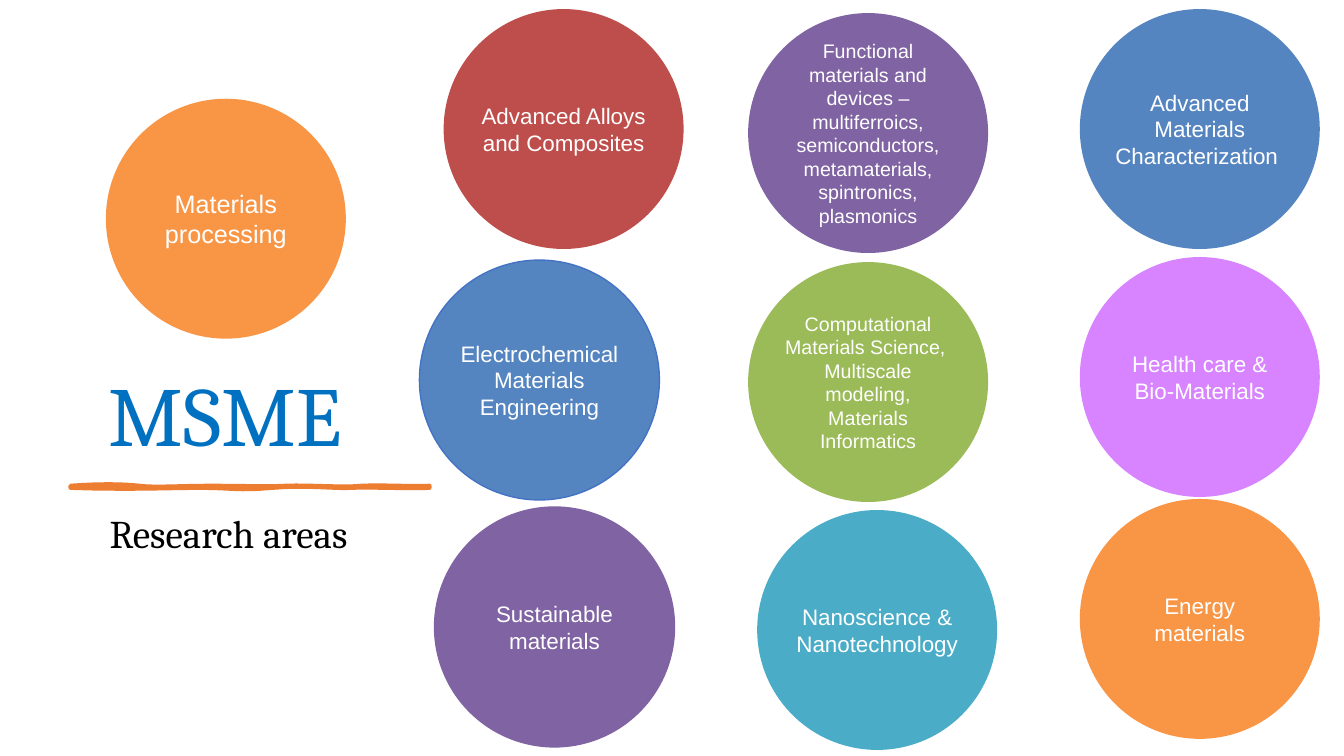
import pptx
import pptx.dml.color
import pptx.enum.shapes
import pptx.enum.text
import pptx.util

Inches = pptx.util.Inches
Pt = pptx.util.Pt
RGBColor = pptx.dml.color.RGBColor
Anchor = pptx.enum.text.MSO_ANCHOR
Align = pptx.enum.text.PP_ALIGN

WHITE = RGBColor(0xFF, 0xFF, 0xFF)
BLACK = RGBColor(0, 0, 0)
TITLE_BLUE = RGBColor(0x00, 0x70, 0xC0)
RULE_ORANGE = RGBColor(0xED, 0x7D, 0x31)
GREEN = RGBColor(0x9B, 0xBB, 0x58)
PURPLE = RGBColor(0x80, 0x63, 0xA2)
ORANGE = RGBColor(0xF8, 0x96, 0x46)
BLUE = RGBColor(0x55, 0x85, 0xC0)
EDGE_BLUE = RGBColor(0x44, 0x72, 0xC4)
TEAL = RGBColor(0x4B, 0xAC, 0xC7)
VIOLET = RGBColor(0xD8, 0x83, 0xFF)
RED = RGBColor(0xBE, 0x4E, 0x4C)

# Content: paragraphs, left, top, text size, fill, outline
DIAMETER = 2.38
RIGHT_COLUMN = 10.71
MIDDLE_COLUMN = 7.42
RESEARCH_AREAS = [
    (["Computational Materials Science, ", "Multiscale modeling,", "Materials Informatics"],
     MIDDLE_COLUMN, 2.6, 14, GREEN, None),
    (["Functional\vmaterials and devices – multiferroics, semiconductors, "
      "metamaterials, spintronics, plasmonics"], MIDDLE_COLUMN, 0.13, 14, PURPLE, None),
    (["Materials processing"], 1.05, 0.98, 18, ORANGE, None),
    (["Energy\vmaterials"], RIGHT_COLUMN, 4.95, 16, ORANGE, None),
    (["Advanced Materials Characterization "], RIGHT_COLUMN, 0.09, 16, BLUE, None),
    (["Nanoscience & Nanotechnology"], 7.51, 5.06, 16, TEAL, None),
    (["Health care & Bio-Materials"], RIGHT_COLUMN, 2.55, 16, VIOLET, None),
    (["Sustainable materials"], 4.31, 5.03, 16, PURPLE, PURPLE),
    (["Advanced Alloys and Composites"], 4.4, 0.09, 16, RED, None),
    (["Electrochemical Materials Engineering"], 4.16, 2.58, 16, BLUE, EDGE_BLUE),
]

# Hand-drawn rule: start, then control, control, end for each curve
RULE_START = (0.7, 4.82)
RULE_CURVES = [
    ((0.97, 4.8), (1.21, 4.8), (1.38, 4.82)),
    ((1.55, 4.84), (1.77, 4.82), (2.09, 4.82)),
    ((2.41, 4.82), (2.6, 4.83), (2.84, 4.82)),
    ((3.08, 4.81), (3.39, 4.84), (3.59, 4.82)),
    ((3.79, 4.81), (4.12, 4.83), (4.26, 4.82)),
    ((4.26, 4.83), (4.26, 4.84), (4.26, 4.84)),
    ((4.08, 4.85), (3.64, 4.83), (3.48, 4.84)),
    ((3.32, 4.85), (3.04, 4.81), (2.7, 4.84)),
    ((2.35, 4.87), (2.31, 4.84), (1.99, 4.84)),
    ((1.66, 4.84), (1.32, 4.86), (0.7, 4.84)),
]
CURVE_STEPS = 8

FRAME_ZERO = dict(margin_left=0, margin_right=0, margin_top=0, margin_bottom=0,
                  word_wrap=True, vertical_anchor=Anchor.MIDDLE)
FRAME_TITLE = dict(word_wrap=True, vertical_anchor=Anchor.BOTTOM,
                   auto_size=pptx.enum.text.MSO_AUTO_SIZE.NONE)
FRAME_SUBTITLE = dict(word_wrap=False,
                      auto_size=pptx.enum.text.MSO_AUTO_SIZE.SHAPE_TO_FIT_TEXT)


def set_values(target, values):
    for name, value in values.items():
        setattr(target, name, value)


def write_text(shape, lines, frame_format, paragraph_format, font_name, size, color):
    frame = shape.text_frame
    frame.text = "\n".join(lines)
    set_values(frame, frame_format)
    for paragraph in frame.paragraphs:
        set_values(paragraph, paragraph_format)
        for run in paragraph.runs:
            set_values(run.font, dict(name=font_name, size=Pt(size)))
            run.font.color.rgb = color


def paint(shape, fill, outline, width):
    shape.shadow.inherit = False
    shape.fill.solid()
    shape.fill.fore_color.rgb = fill
    if outline is None:
        shape.line.fill.background()
    else:
        shape.line.color.rgb = outline
        shape.line.width = Pt(width)


def curve_points(start, curves):
    for first, second, end in curves:
        for step in range(1, CURVE_STEPS + 1):
            t = step / CURVE_STEPS
            u = 1 - t
            yield tuple(
                Inches(u**3 * a + 3 * u * u * t * b + 3 * u * t * t * c + t**3 * d)
                for a, b, c, d in zip(start, first, second, end))
        start = end


def main():
    presentation = pptx.Presentation()
    presentation.slide_width = Inches(13.33)
    presentation.slide_height = Inches(7.5)
    slide = presentation.slides.add_slide(presentation.slide_layouts[5])

    # Title
    title = slide.shapes.title
    set_values(title, dict(left=Inches(0.98), top=Inches(0.75),
                           width=Inches(3.91), height=Inches(3.91)))
    write_text(title, ["MSME"], FRAME_TITLE,
               dict(alignment=Align.LEFT, line_spacing=0.9), "Cambria", 60, TITLE_BLUE)

    # Hand-drawn rule
    builder = slide.shapes.build_freeform(*(Inches(value) for value in RULE_START))
    builder.add_line_segments(curve_points(RULE_START, RULE_CURVES), close=True)
    paint(builder.convert_to_shape(), RULE_ORANGE, RULE_ORANGE, 3)

    # Subtitle
    subtitle = slide.shapes.add_textbox(Inches(0.99), Inches(5), Inches(2.74), Inches(0.57))
    write_text(subtitle, ["Research areas"], FRAME_SUBTITLE,
               dict(alignment=Align.LEFT), "Cambria", 28, BLACK)

    # Research area circles
    for lines, left, top, size, fill, outline in RESEARCH_AREAS:
        circle = slide.shapes.add_shape(
            pptx.enum.shapes.MSO_SHAPE.OVAL,
            Inches(left), Inches(top), Inches(DIAMETER), Inches(DIAMETER))
        paint(circle, fill, outline, 1)
        write_text(circle, lines, FRAME_ZERO, dict(alignment=Align.CENTER),
                   "Arial", size, WHITE)

    presentation.save("out.pptx")


if __name__ == "__main__":
    main()
